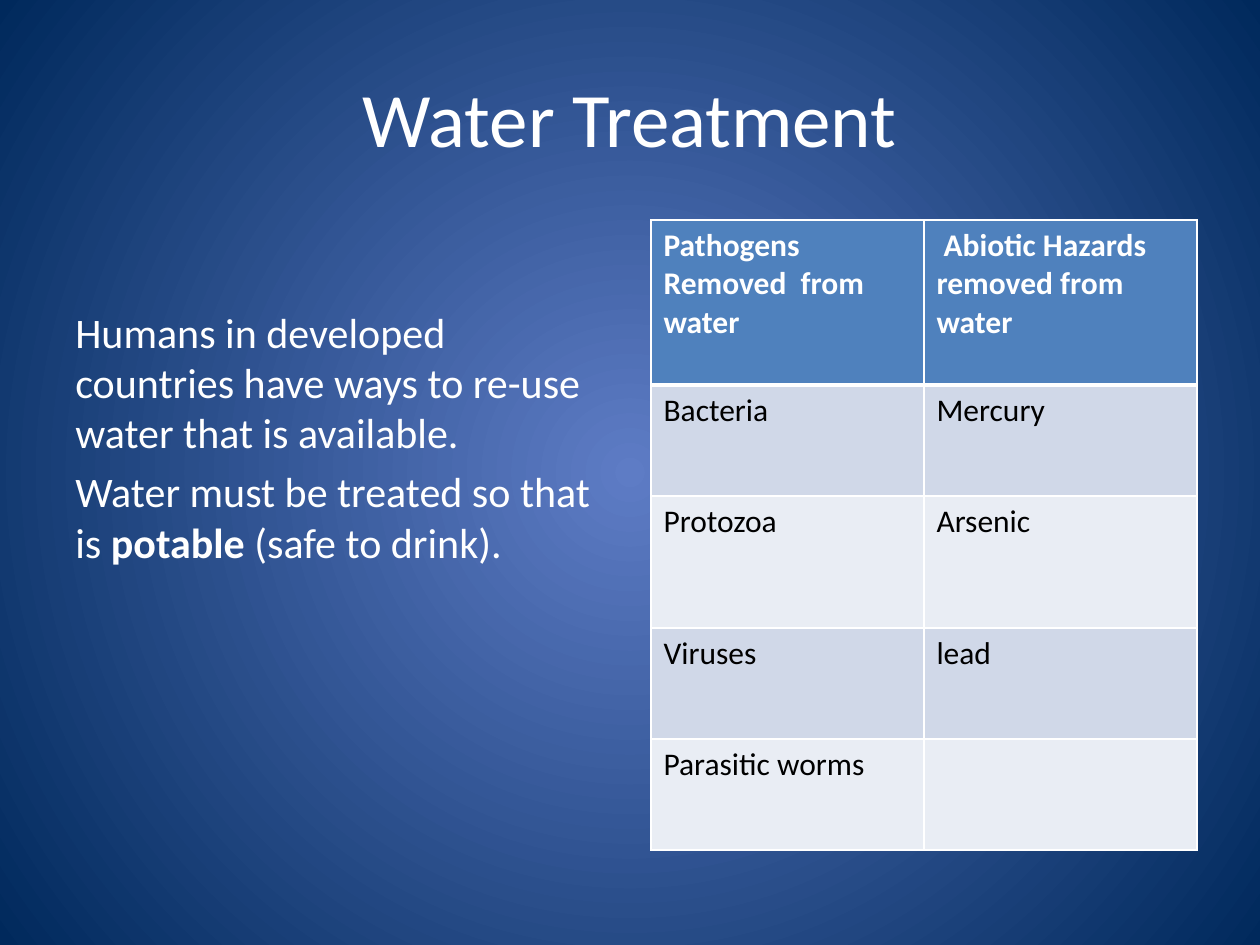
from dataclasses import dataclass

from lxml import etree
from pptx import Presentation
from pptx import util as u
from pptx.dml.color import RGBColor
from pptx.enum import text
from pptx.oxml import ns

EMU_PER_PX = 914400 / 126
FONT = "Calibri"
WHITE, BLACK = "FFFFFF", "000000"
HEADER_FILL, BANDS = "4F81BD", ("D0D8E8", "E9EDF4")


@dataclass
class Run:
    wording: str
    bold: bool = False


@dataclass
class TextBlock:
    left: int
    top: int
    width: int
    height: int
    size: int
    paragraphs: list[list[Run]]
    align: text.PP_ALIGN = text.PP_ALIGN.LEFT
    anchor: text.MSO_ANCHOR = text.MSO_ANCHOR.TOP
    space_before: float = 0


@dataclass
class TableRow:
    height: int
    cells: tuple[str, str]


BLOCKS = [
    TextBlock(63, 38, 1134, 157, 44, [[Run("Water Treatment")]],
              text.PP_ALIGN.CENTER, text.MSO_ANCHOR.MIDDLE),
    TextBlock(63, 300, 557, 544, 24, [
        [Run("Humans in developed countries have ways to re-use water that is available.")],
        [Run("Water must be treated so that is "), Run("potable ", True),
         Run("(safe to drink).")],
    ], space_before=4.8),
]
ROWS = [
    TableRow(165, ("Pathogens Removed  from water", " Abiotic Hazards removed from water")),
    TableRow(111, ("Bacteria", "Mercury")),
    TableRow(132, ("Protozoa", "Arsenic")),
    TableRow(111, ("Viruses", "lead")),
    TableRow(111, ("Parasitic worms", "")),
]
TABLE_LEFT, TABLE_TOP, COLUMN_WIDTH = 651, 220, 273


def px(length: int) -> u.Emu:
    return u.Emu(round(length * EMU_PER_PX))


def rgb(color: str) -> RGBColor:
    return RGBColor.from_string(color)


def set_font(font, size: int, color: str) -> None:
    font.name = FONT
    font.size = u.Pt(size)
    font.color.rgb = rgb(color)


def paint_background(slide, center: str, edge: str) -> None:
    fill = slide.background.fill
    fill.gradient()
    for stop, color, position in zip(fill.gradient_stops, (center, edge), (0, 1)):
        stop.color.rgb = rgb(color)
        stop.position = position
    linear = slide.element.find(".//" + ns.qn("a:lin"))
    radial = etree.Element(ns.qn("a:path"), path="circle")
    etree.SubElement(radial, ns.qn("a:fillToRect"),
                     {side: "50000" for side in "ltrb"})
    linear.getparent().replace(linear, radial)


def draw_text(slide, block: TextBlock) -> None:
    shape = slide.shapes.add_textbox(px(block.left), px(block.top),
                                     px(block.width), px(block.height))
    frame = shape.text_frame
    frame.word_wrap = True
    frame.vertical_anchor = block.anchor
    for index, runs in enumerate(block.paragraphs):
        paragraph = frame.add_paragraph() if index else frame.paragraphs[0]
        paragraph.alignment = block.align
        paragraph.space_before = u.Pt(block.space_before)
        set_font(paragraph.font, block.size, WHITE)
        for part in runs:
            run = paragraph.add_run()
            run.text = part.wording
            if part.bold:
                run.font.bold = True


def add_border(cell, side: str, width: float) -> None:
    properties = cell._tc.get_or_add_tcPr()
    line = etree.SubElement(properties, ns.qn(f"a:ln{side}"), w=str(u.Pt(width)))
    solid = etree.SubElement(line, ns.qn("a:solidFill"))
    etree.SubElement(solid, ns.qn("a:srgbClr"), val=WHITE)


def draw_table(slide, rows: list[TableRow]) -> None:
    columns = len(rows[0].cells)
    table = slide.shapes.add_table(
        len(rows), columns, px(TABLE_LEFT), px(TABLE_TOP),
        px(COLUMN_WIDTH * columns), px(sum(row.height for row in rows))).table
    for column in table.columns:
        column.width = px(COLUMN_WIDTH)
    for index, row in enumerate(rows):
        table.rows[index].height = px(row.height)
        is_header = index == 0
        for position, wording in enumerate(row.cells):
            cell = table.cell(index, position)
            cell.text = wording
            paragraph = cell.text_frame.paragraphs[0]
            set_font(paragraph.font, 18, WHITE if is_header else BLACK)
            paragraph.font.bold = is_header
            for side in "LRTB":
                heavy = (index, side) in ((0, "B"), (1, "T"))
                add_border(cell, side, 3 if heavy else 1)
            cell.fill.solid()
            cell.fill.fore_color.rgb = rgb(HEADER_FILL if is_header else BANDS[(index - 1) % 2])


def main() -> None:
    presentation = Presentation()
    presentation.slide_width, presentation.slide_height = px(1260), px(945)
    slide = presentation.slides.add_slide(presentation.slide_layouts[6])
    paint_background(slide, "5E7CC5", "00295C")
    for block in BLOCKS:
        draw_text(slide, block)
    draw_table(slide, ROWS)
    presentation.save("out.pptx")


if __name__ == "__main__":
    main()
